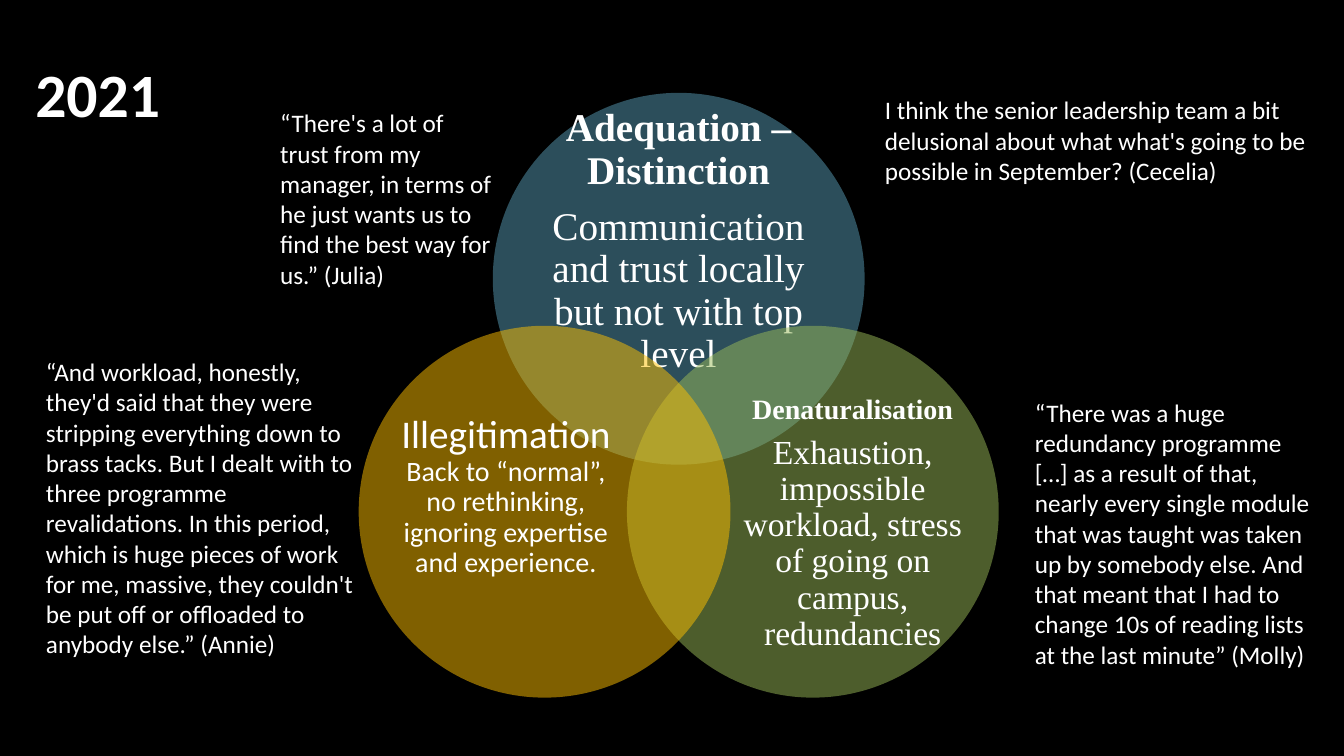
from lxml import etree
from pptx import Presentation
from pptx import util as u
from pptx.dml.color import RGBColor
from pptx.enum import shapes, text
from pptx.oxml.ns import qn

SERIF = "Times New Roman"
SANS = "Calibri"
WHITE = "FFFFFF"
DIAMETER = 9.37

QUOTES = [
    ((6.81, 2.59, 5.84, 4.88),
     "“There's a lot of trust from my manager, in terms of he just wants us to "
     "find the best way for us.” (Julia)"),
    ((25.83, 9.88, 7.49, 7.19),
     "“There was a huge redundancy programme […] as a result of that, nearly every "
     "single module that was taught was taken up by somebody else. And that meant "
     "that I had to change 10s of reading lists at the last minute” (Molly)"),
    ((0.91, 8.86, 8.26, 8.71),
     "“And workload, honestly, they'd said that they were stripping everything down "
     "to brass tacks. But I dealt with to three programme revalidations. In this "
     "period, which is huge pieces of work for me, massive, they couldn't be put off "
     "or offloaded to anybody else.” (Annie)"),
    ((22.05, 2.26, 11.2, 2.57),
     "I think the senior leadership team a bit delusional about what what's going to "
     "be possible in September? (Cecelia)"),
]

CIRCLES = [
    {"color": "589DB6", "offset": (3.38, 0), "label": (1.24, 1.65, 6.88, 4.22), "bottom": 0,
     "paragraphs": [
         [("Adequation – Distinction", SERIF, 28, True)],
         [("Communication and trust locally but not with top level", SERIF, 28, False)]]},
    {"color": "9BBB59", "offset": (6.76, 5.87), "label": (2.87, 2.41, 5.64, 5.16), "bottom": 0,
     "paragraphs": [
         [("Denaturalisation", SERIF, 20, True)],
         [("Exhaustion, impossible workload, stress of going on campus, redundancies",
           SERIF, 24, False)]]},
    {"color": "FFC000", "offset": (0, 5.87), "label": (0.89, 2.41, 5.64, 5.16), "bottom": 1.37,
     "paragraphs": [
         [("Illegitimation", SANS, 28, False),
          ("Back to “normal”, no rethinking, ignoring expertise and experience.",
           SANS, 20, False)]]},
]


def rgb(value):
    return RGBColor.from_string(value)


def apply_format(target, values):
    for name, value in values.items():
        setattr(target, name, value)


def add_run(paragraph, content, font, size, bold=False):
    run = paragraph.add_run()
    run.text = content
    apply_format(run.font, {"name": font, "size": u.Pt(size), "bold": bold})
    run.font.color.rgb = rgb(WHITE)


def add_text_frame(slide, box, **values):
    frame = slide.shapes.add_textbox(*map(u.Cm, box)).text_frame
    apply_format(frame, {"word_wrap": True, **values})
    return frame


def add_title(slide, box):
    frame = add_text_frame(slide, box, vertical_anchor=text.MSO_ANCHOR.MIDDLE)
    frame.paragraphs[0].line_spacing = 0.9
    add_run(frame.paragraphs[0], "2021", SANS, 44, True)


def add_quote(slide, box, content):
    frame = add_text_frame(slide, box)
    add_run(frame.paragraphs[0], content, SANS, 18)


def add_circle(slide, box, color):
    circle = slide.shapes.add_shape(shapes.MSO_SHAPE.OVAL, *map(u.Cm, box))
    circle.shadow.inherit = False
    circle.line.fill.background()
    circle.fill.solid()
    circle.fill.fore_color.rgb = rgb(color)
    solid = circle.fill._xPr.find(qn("a:solidFill"))
    etree.SubElement(solid[0], qn("a:alpha"), val="50000")


def add_circle_label(slide, box, paragraphs, bottom):
    frame = add_text_frame(slide, box, vertical_anchor=text.MSO_ANCHOR.MIDDLE,
                           margin_left=0, margin_right=0, margin_top=0,
                           margin_bottom=u.Cm(bottom))
    for index, runs in enumerate(paragraphs):
        paragraph = frame.add_paragraph() if index else frame.paragraphs[0]
        apply_format(paragraph, {"alignment": text.PP_ALIGN.CENTER, "line_spacing": 0.9,
                                 "space_after": u.Pt(round(runs[0][2] * 0.35))})
        for position, run in enumerate(runs):
            if position:
                paragraph.add_line_break()
            add_run(paragraph, *run)


def add_venn(slide, left, top):
    for circle in CIRCLES:
        x, y = left + circle["offset"][0], top + circle["offset"][1]
        add_circle(slide, (x, y, DIAMETER, DIAMETER), circle["color"])
        dx, dy, width, height = circle["label"]
        add_circle_label(slide, (x + dx, y + dy, width, height),
                         circle["paragraphs"], circle["bottom"])


def main():
    presentation = Presentation()
    apply_format(presentation, {"slide_width": u.Cm(33.87), "slide_height": u.Cm(19.05)})
    slide = presentation.slides.add_slide(presentation.slide_layouts[6])
    slide.background.fill.solid()
    slide.background.fill.fore_color.rgb = rgb("000000")
    add_title(slide, (0.64, 0.61, 29.21, 3.68))
    add_venn(slide, 9.04, 2.34)
    for box, content in QUOTES:
        add_quote(slide, box, content)
    presentation.save("out.pptx")


if __name__ == "__main__":
    main()
